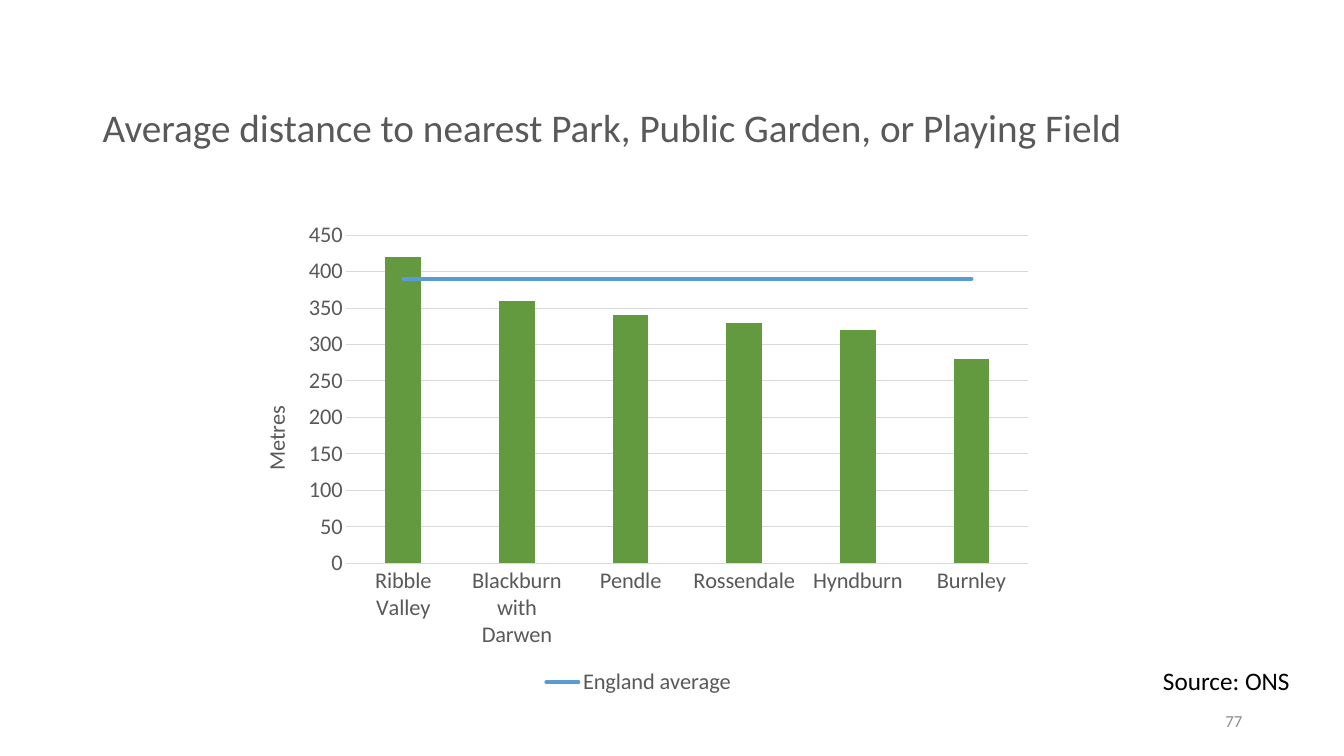
from lxml import etree
from pptx import Presentation
from pptx.chart.data import CategoryChartData
from pptx.dml.color import RGBColor
from pptx.enum.chart import XL_CHART_TYPE, XL_LEGEND_POSITION, XL_MARKER_STYLE, XL_TICK_MARK
from pptx.enum.text import MSO_ANCHOR, PP_ALIGN
from pptx.oxml import parse_xml
from pptx.oxml.ns import nsdecls, qn
from pptx.util import Inches, Pt

COLUMNS = XL_CHART_TYPE.COLUMN_CLUSTERED
BOTTOM = XL_LEGEND_POSITION.BOTTOM
NO_TICK = XL_TICK_MARK.NONE
NO_MARKER = XL_MARKER_STYLE.NONE
TOP, MIDDLE = MSO_ANCHOR.TOP, MSO_ANCHOR.MIDDLE
LEFT, RIGHT = PP_ALIGN.LEFT, PP_ALIGN.RIGHT

FONT = "Calibri"
BLACK = RGBColor(0x00, 0x00, 0x00)
DARK_GREY = RGBColor(0x59, 0x59, 0x59)
MID_GREY = RGBColor(0x8C, 0x8C, 0x8C)
GRID_GREY = RGBColor(0xD9, 0xD9, 0xD9)
GREEN = RGBColor(0x63, 0x9A, 0x3F)
BLUE = RGBColor(0x5B, 0x9B, 0xD5)

DISTANCES = {
    "Ribble Valley": 420,
    "Blackburn with Darwen": 360,
    "Pendle": 340,
    "Rossendale": 330,
    "Hyndburn": 320,
    "Burnley": 280,
}
ENGLAND_AVERAGE = 390


def style_font(font, size, color):
    font.name = FONT
    font.size = Pt(size)
    font.bold = False
    font.color.rgb = color


def style_line(line, color, width):
    line.color.rgb = color
    line.width = Pt(width)


def add_text(slide, box, text, size, color, align=LEFT, anchor=MIDDLE):
    frame = slide.shapes.add_textbox(*map(Inches, box)).text_frame
    frame.word_wrap = True
    frame.vertical_anchor = anchor
    paragraph = frame.paragraphs[0]
    paragraph.text = text
    paragraph.alignment = align
    style_font(paragraph.font, size, color)


def remove_children(parent, tag):
    for child in parent.findall(qn(tag)):
        parent.remove(child)


def set_layout(parent, position, target="", **shares):
    """Place a chart part by shares of the chart's width and height."""
    remove_children(parent, "c:layout")
    layout = etree.Element(qn("c:layout"))
    manual = etree.SubElement(layout, qn("c:manualLayout"))
    settings = {"layoutTarget": target} if target else {}
    settings.update(xMode="edge", yMode="edge", **shares)
    for tag, value in settings.items():
        etree.SubElement(manual, qn(f"c:{tag}")).set("val", str(value))
    parent.insert(position, layout)


def move_average_to_line(chart):
    """Turn the second column series into a line on the same axes."""
    bars = chart.plots[0]
    bar_chart = chart.element.find(".//" + qn("c:barChart"))
    average = bar_chart.findall(qn("c:ser"))[1]
    remove_children(average, "c:invertIfNegative")
    axis_ids = "".join(f'<c:axId val="{axis.get("val")}"/>'
                       for axis in bar_chart.findall(qn("c:axId")))
    line_chart = parse_xml(
        f'<c:lineChart {nsdecls("c")}><c:grouping val="standard"/>'
        f'<c:varyColors val="0"/><c:marker val="1"/>{axis_ids}</c:lineChart>')
    line_chart.insert(2, average)
    bar_chart.addnext(line_chart)

    bars.gap_width = 219
    bars.vary_by_categories = False
    columns = bars.series[0].format.fill
    columns.solid()
    columns.fore_color.rgb = GREEN
    line = chart.plots[1].series[0]
    line.smooth = False
    line.marker.style = NO_MARKER
    style_line(line.format.line, BLUE, 3)
    average.find(qn("c:spPr")).find(qn("a:ln")).set("cap", "rnd")


def style_axes(chart):
    for axis in (chart.category_axis, chart.value_axis):
        axis.major_tick_mark = axis.minor_tick_mark = NO_TICK
        style_font(axis.tick_labels.font, 16, DARK_GREY)
    style_line(chart.category_axis.format.line, GRID_GREY, 0.75)

    metres = chart.value_axis
    metres.minimum_scale, metres.maximum_scale, metres.major_unit = 0, 450, 50
    metres.tick_labels.number_format = "0"
    metres.tick_labels.number_format_is_linked = False
    metres.format.line.fill.background()
    style_line(metres.major_gridlines.format.line, GRID_GREY, 0.75)
    title = metres.axis_title
    title.text_frame.text = "Metres"
    style_font(title.text_frame.paragraphs[0].font, 16, DARK_GREY)
    title_xml = chart.element.find(".//" + qn("c:valAx")).find(qn("c:title"))
    set_layout(title_xml, 1, x=0.03, y=0.39)


def add_legend(chart):
    """Show the England average only."""
    chart.has_legend = True
    chart.legend.position = BOTTOM
    chart.legend.include_in_layout = False
    style_font(chart.legend.font, 16, DARK_GREY)
    legend_xml = chart.element.find(".//" + qn("c:legend"))
    hidden_entry = parse_xml(
        f'<c:legendEntry {nsdecls("c")}><c:idx val="0"/>'
        '<c:delete val="1"/></c:legendEntry>')
    has_position = legend_xml.find(qn("c:legendPos")) is not None
    legend_xml.insert(int(has_position), hidden_entry)


def add_distance_chart(slide, box):
    data = CategoryChartData()
    data.categories = list(DISTANCES)
    data.add_series("Series 1", list(DISTANCES.values()))
    data.add_series("England average", [ENGLAND_AVERAGE] * len(DISTANCES))
    chart = slide.shapes.add_chart(COLUMNS, *map(Inches, box), data).chart
    chart.has_title = False
    style_font(chart.font, 16, BLACK)
    move_average_to_line(chart)
    style_axes(chart)
    add_legend(chart)
    plot_area = chart.element.find(".//" + qn("c:plotArea"))
    set_layout(plot_area, 0, "inner", x=0.14, y=0.05, w=0.84, h=0.67)


def main():
    deck = Presentation()
    deck.slide_width, deck.slide_height = Inches(13.33), Inches(7.5)
    slide = deck.slides.add_slide(deck.slide_layouts[6])
    add_text(slide, (0.92, 0.72, 11.5, 1.08),
             "Average distance to nearest Park, Public Garden, or Playing Field",
             28, DARK_GREY)
    add_text(slide, (9.42, 6.95, 3, 0.4), "77", 12, MID_GREY, RIGHT)
    add_text(slide, (10.36, 6.55, 2.53, 0.4), "Source: ONS", 18, BLACK, RIGHT, TOP)
    add_distance_chart(slide, (2.31, 2.09, 8.05, 4.86))
    deck.save("out.pptx")


if __name__ == "__main__":
    main()
